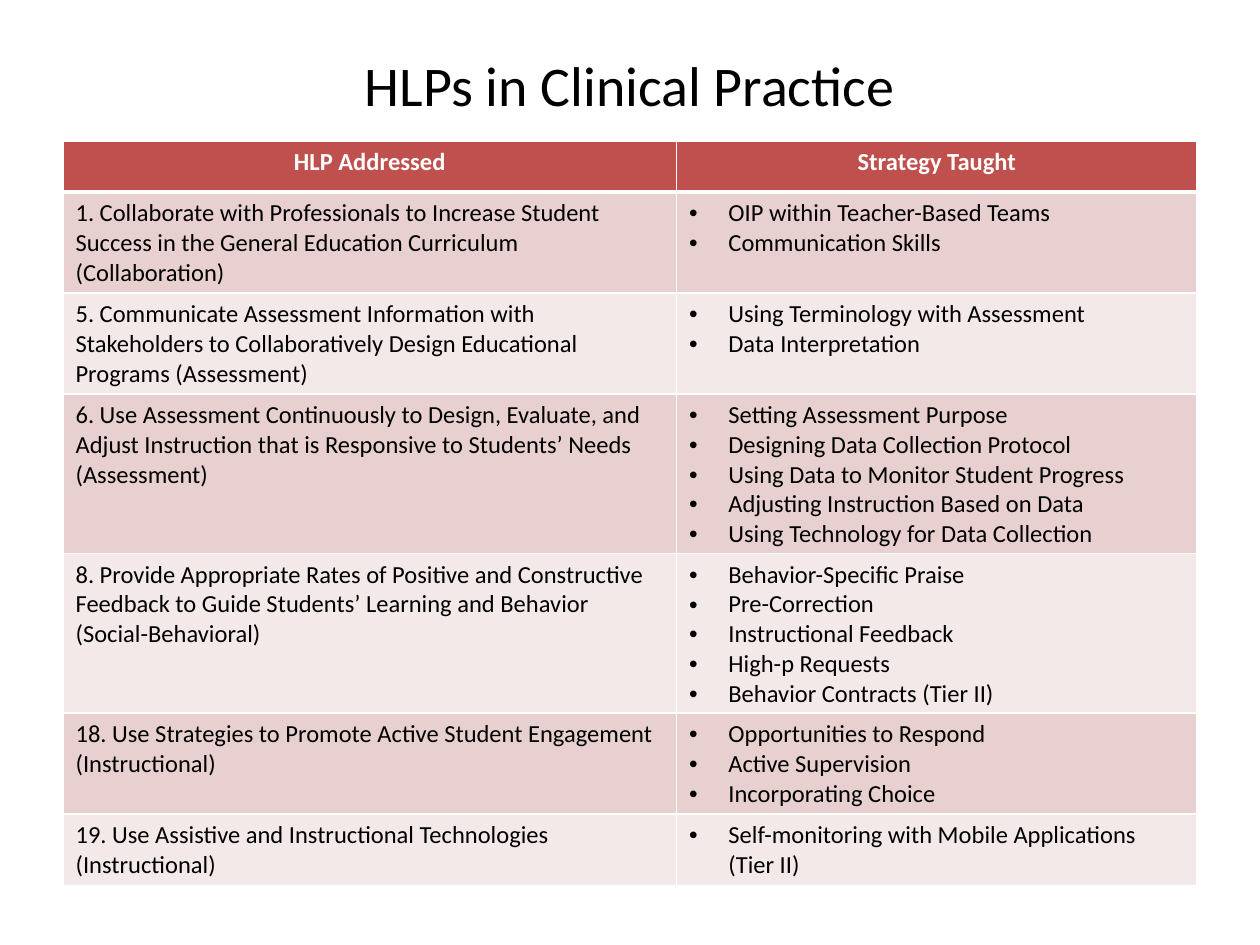
import pptx
import pptx.dml.color
import pptx.enum.text
import pptx.oxml.ns
import pptx.util
from lxml import etree
from pptx.util import Cm

ALIGN = pptx.enum.text.PP_ALIGN
WHITE, BLACK, HEADER_RED = "FFFFFF", "000000", "C0504D"
BAND_COLORS = ("E8D0D0", "F4E9E9")
BULLET_INDENT = Cm(0.79)

HEADINGS = ("HLP Addressed", "Strategy Taught")
PRACTICES = [
    ("1. Collaborate with Professionals to Increase Student Success in the "
     "General Education Curriculum (Collaboration)",
     ["OIP within Teacher-Based Teams", "Communication Skills"]),
    ("5. Communicate Assessment Information with Stakeholders to "
     "Collaboratively Design Educational Programs (Assessment)",
     ["Using Terminology with Assessment", "Data Interpretation"]),
    ("6. Use Assessment Continuously to Design, Evaluate, and Adjust "
     "Instruction that is Responsive to Students’ Needs (Assessment)",
     ["Setting Assessment Purpose", "Designing Data Collection Protocol",
      "Using Data to Monitor Student Progress",
      "Adjusting Instruction Based on Data",
      "Using Technology for Data Collection"]),
    ("8. Provide Appropriate Rates of Positive and Constructive Feedback to "
     "Guide Students’ Learning and Behavior (Social-Behavioral)",
     ["Behavior-Specific Praise", "Pre-Correction", "Instructional Feedback",
      "High-p Requests", "Behavior Contracts (Tier II)"]),
    ("18. Use Strategies to Promote Active Student Engagement (Instructional)",
     ["Opportunities to Respond", "Active Supervision",
      "Incorporating Choice"]),
    ("19. Use Assistive and Instructional Technologies (Instructional)",
     ["Self-monitoring with Mobile Applications (Tier II)"]),
]


def write_text(frame, lines, size=14, color=BLACK, bold=False,
               align=ALIGN.LEFT, bullet=False):
    """Write each line as a paragraph, optionally with a hanging bullet."""
    for index, line in enumerate(lines):
        paragraph = frame.add_paragraph() if index else frame.paragraphs[0]
        paragraph.alignment = align
        run = paragraph.add_run()
        run.text = line
        run.font.name = "Calibri"
        run.font.size = pptx.util.Pt(size)
        run.font.bold = bold
        run.font.color.rgb = pptx.dml.color.RGBColor.from_string(color)
        if bullet:
            properties = paragraph._p.get_or_add_pPr()
            properties.set("marL", str(BULLET_INDENT))
            properties.set("indent", str(-BULLET_INDENT))
            font = etree.SubElement(properties, pptx.oxml.ns.qn("a:buFont"))
            font.set("typeface", "Arial")
            mark = etree.SubElement(properties, pptx.oxml.ns.qn("a:buChar"))
            mark.set("char", "•")


def style_cell(cell, color, top=1, bottom=1):
    """Fill the cell and give it white borders, with widths in points."""
    properties = cell._tc.get_or_add_tcPr()
    for side, width in (("L", 1), ("R", 1), ("T", top), ("B", bottom)):
        line = etree.SubElement(properties, pptx.oxml.ns.qn(f"a:ln{side}"))
        line.set("w", str(pptx.util.Pt(width)))
        fill = etree.SubElement(line, pptx.oxml.ns.qn("a:solidFill"))
        etree.SubElement(fill, pptx.oxml.ns.qn("a:srgbClr")).set("val", WHITE)
    cell.fill.solid()
    cell.fill.fore_color.rgb = pptx.dml.color.RGBColor.from_string(color)


presentation = pptx.Presentation()
presentation.slide_width = Cm(25.4)
presentation.slide_height = Cm(19.05)
slide = presentation.slides.add_slide(presentation.slide_layouts[6])

title = slide.shapes.add_textbox(Cm(1.27), Cm(0.76), Cm(22.86), Cm(1.88))
title.text_frame.word_wrap = True
title.text_frame.vertical_anchor = pptx.enum.text.MSO_ANCHOR.MIDDLE
write_text(title.text_frame, ["HLPs in Clinical Practice"], size=32,
           align=ALIGN.CENTER)

table = slide.shapes.add_table(len(PRACTICES) + 1, 2, Cm(1.27), Cm(2.84),
                               Cm(22.86), Cm(15.01)).table
for column, width in zip(table.columns, (12.37, 10.49)):
    column.width = Cm(width)
# Rows start at one line and grow with their text.
for row in table.rows:
    row.height = Cm(1.03)

for column, heading in enumerate(HEADINGS):
    cell = table.cell(0, column)
    style_cell(cell, HEADER_RED, bottom=3)
    write_text(cell.text_frame, [heading], color=WHITE, bold=True,
               align=ALIGN.CENTER)

for row, (practice, strategies) in enumerate(PRACTICES, start=1):
    for column, lines in enumerate(([practice], strategies)):
        cell = table.cell(row, column)
        style_cell(cell, BAND_COLORS[(row - 1) % 2], top=3 if row == 1 else 1)
        write_text(cell.text_frame, lines, bullet=column == 1)

presentation.save("out.pptx")
